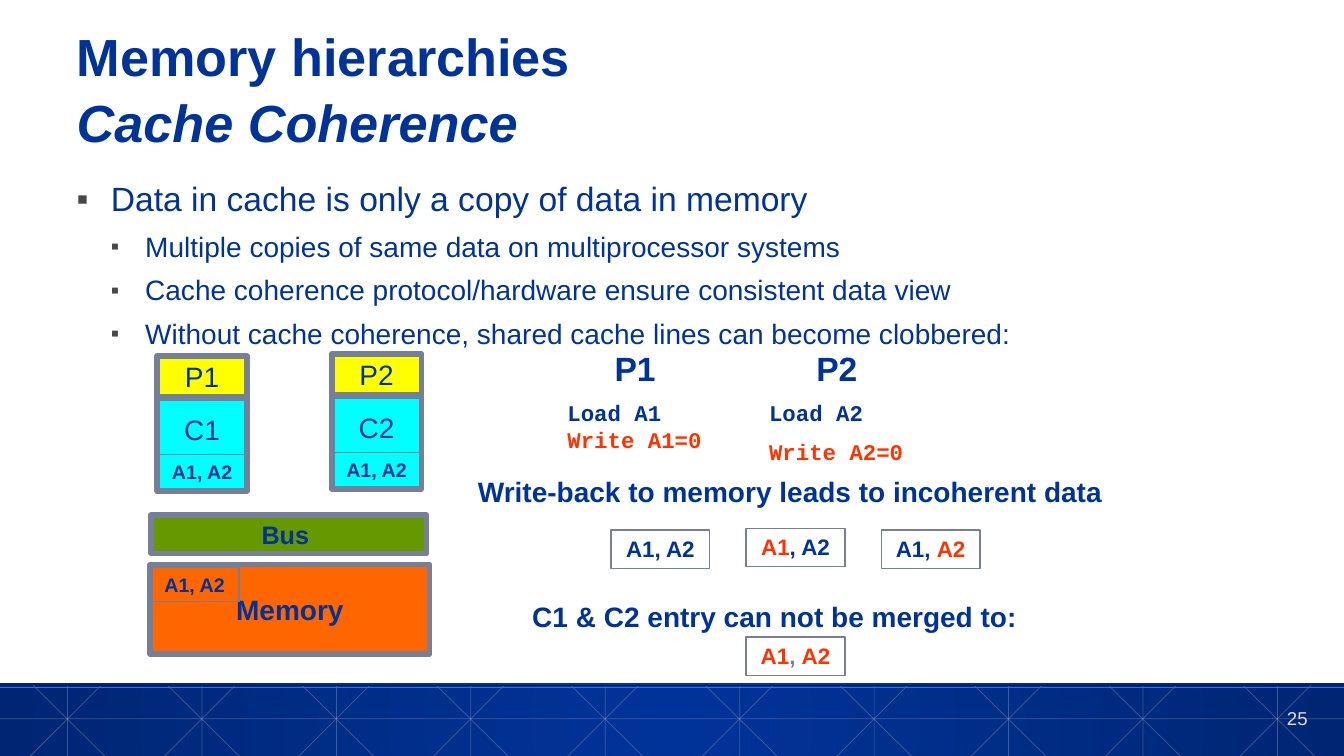
"""Build the cache coherence slide."""
import pptx
import pptx.dml.color
import pptx.enum.shapes
import pptx.enum.text
import pptx.oxml
import pptx.oxml.ns
import pptx.util
from pptx.util import Inches

Color = pptx.dml.color.RGBColor
Pt = pptx.util.Pt
Align = pptx.enum.text.PP_ALIGN
Anchor = pptx.enum.text.MSO_ANCHOR
Kind = pptx.enum.shapes.MSO_SHAPE
Wire = pptx.enum.shapes.MSO_CONNECTOR

NAVY = Color(0x00, 0x33, 0x99)
DEEP = Color(0x00, 0x26, 0x73)
INK = Color(0x00, 0x19, 0x4C)
SKY = Color(0x29, 0x70, 0xFF)
MESH = Color(0xAC, 0xB2, 0xC2)
PALE = Color(0xDD, 0xDE, 0xDD)
SLATE = Color(0x75, 0x7F, 0x99)
RED = Color(0xFF, 0x33, 0x00)
ORANGE = Color(0xFF, 0x66, 0x00)
CYAN = Color(0x00, 0xFF, 0xFF)
YELLOW = Color(0xFF, 0xFF, 0x00)
GREEN = Color(0x66, 0x99, 0x00)

TITLE = [[("Memory hierarchies\n", NAVY), ("Cache Coherence", NAVY, True)]]
POINTS = [
    (0, "Data in cache is only a copy of data in memory"),
    (1, "Multiple copies of same data on multiprocessor systems"),
    (1, "Cache coherence protocol/hardware ensure consistent data view"),
    (1, "Without cache coherence, shared cache lines can become clobbered:"),
]
PAIR = [[("A1, A2", NAVY)]]
CORES = [("1", 1.56, 3.53), ("2", 3.29, 3.51)]
HEADS = [("P1", 5.3), ("P2", 7.3)]
CODE = [
    (5.53, 0.64, [[("Load A1\n", NAVY), ("Write A1=0", RED)]]),
    (7.53, 0.77, [[("Load A2", NAVY)], [("Write A2=0", RED)]]),
]
CLAIMS = [
    (4.64, 4.66, 6.75, 0.58, "Write-back to memory leads to incoherent data"),
    (5.18, 5.9, 5.42, 0.44, "C1 & C2 entry can not be merged to:"),
]
STATES = [
    (6.06, 5.26, PAIR),
    (7.4, 5.24, [[("A1", RED), (", A2", NAVY)]]),
    (8.74, 5.26, [[("A1, ", NAVY), ("A2", RED)]]),
    (7.4, 6.32, [[("A1", RED), (", ", SLATE), ("A2", RED)]]),
]

deck = pptx.Presentation()
deck.slide_width, deck.slide_height = Inches(13.33), Inches(7.5)
slide = deck.slides.add_slide(deck.slide_layouts[6])
shapes = slide.shapes


def style(font, size, color, bold, face="Arial"):
    font.name, font.size, font.bold = face, Pt(size), bold
    font.color.rgb = color


def write(shape, paras, size, bold=True, face="Arial", align=Align.LEFT,
          anchor=Anchor.TOP, inset=None, gap=0, lead=None, wrap=True):
    frame = shape.text_frame
    frame.word_wrap, frame.vertical_anchor = wrap, anchor
    if inset is not None:
        frame.margin_left = frame.margin_right = Inches(inset)
        frame.margin_top = frame.margin_bottom = Inches(inset)
    for n, runs in enumerate(paras):
        para = frame.add_paragraph() if n else frame.paragraphs[0]
        para.alignment = align
        if lead:
            para.line_spacing = lead
        if n:
            para.space_before = Pt(gap)
        for words, color, *slant in runs:
            run = para.add_run()
            run.text = words.rstrip("\n")
            style(run.font, size, color, bold, face)
            if slant:
                run.font.italic = True
            if words.endswith("\n"):
                para.add_line_break()


def label(x, y, w, h, paras, size, **look):
    write(shapes.add_textbox(*map(Inches, (x, y, w, h))), paras, size, **look)


def block(x, y, w, h, fill=None, width=4):
    box = shapes.add_shape(Kind.RECTANGLE, *map(Inches, (x, y, w, h)))
    box.shadow.inherit = False
    if fill is None:
        box.fill.background()
    else:
        box.fill.solid()
        box.fill.fore_color.rgb = fill
    if width:
        box.line.color.rgb, box.line.width = SLATE, Pt(width)
    else:
        box.line.fill.background()
    return box


def part(x, y, w, h, fill, words, size, bold=False):
    box = block(x, y, w, h, fill)
    write(box, [[(words, NAVY)]], size, bold, align=Align.CENTER,
          anchor=Anchor.MIDDLE, wrap=False)
    return box


def cell(x, y, w, h, paras, size):
    write(block(x, y, w, h, width=1), paras, size, align=Align.CENTER)


def element(xml):
    return pptx.oxml.parse_xml(xml.replace(" ", f" {pptx.oxml.ns.nsdecls('a')} ", 1))


def rule(x1, y1, x2, y2, color, width, alpha=None):
    line = shapes.add_connector(Wire.STRAIGHT, *map(Inches, (x1, y1, x2, y2)))
    line.line.color.rgb, line.line.width = color, Pt(width)
    props = line._element.spPr
    if alpha:
        tone = props.find(".//" + pptx.oxml.ns.qn("a:srgbClr"))
        tone.append(element(f'<a:alpha val="{alpha * 1000}"/>'))
    props.append(element("<a:effectLst />"))


def footer():
    band = block(0, 6.78, 13.33, 0.72, width=0)
    band.fill.gradient()
    for stop, color in zip(band.fill.gradient_stops, (NAVY, DEEP)):
        stop.color.rgb = color
    grad = band._element.spPr.find(pptx.oxml.ns.qn("a:gradFill"))
    grad.remove(grad.find(pptx.oxml.ns.qn("a:lin")))
    grad.append(element('<a:path path="circle"><a:fillToRect l="50000" '
                        't="50000" r="50000" b="50000"/></a:path>'))
    for n in range(10):
        mid = 0.67 + n * 4 / 3
        for top, foot in ((0, 0), (-0.34, 0.37), (0.33, -0.37)):
            rule(mid + top, 6.8, mid + foot, 7.5, MESH, 0.5, 35)
    rule(0, 7.13, 13.33, 7.13, MESH, 0.5, 35)
    rule(0.36, 6.8, 12.99, 6.8, INK, 1.25)
    rule(0, 6.82, 13.33, 6.82, SKY, 1)
    label(12.6, 7.01, 0.37, 0.22, [[("25", PALE)]], 13.3, bold=False,
          align=Align.RIGHT, anchor=Anchor.BOTTOM, inset=0)


def bullets():
    body = shapes.add_textbox(*map(Inches, (0.76, 1.73, 11.81, 4.88)))
    write(body, [[(words, NAVY)] for _, words in POINTS], 24, False,
          inset=0, gap=5, lead=1.1)
    for para, (level, _) in zip(body.text_frame.paragraphs, POINTS):
        props = para._p.get_or_add_pPr()
        props.set("marL", str(Inches(0.34 * (level + 1))))
        props.set("indent", str(Inches(-0.34)))
        props.append(element('<a:buClr ><a:srgbClr val="474847"/></a:buClr>'))
        props.append(element(f'<a:buSzPct val="{85 if level else 100}000"/>'))
        props.append(element('<a:buFont typeface="Arial"/>'))
        props.append(element('<a:buChar char="▪"/>'))
        para.level = level
        para.runs[0].font.size = Pt(20 if level else 24)


def machine():
    part(1.49, 5.6, 2.77, 0.89, ORANGE, "Memory", 20, True)
    cell(1.49, 5.63, 0.88, 0.34, PAIR, 14)
    part(1.5, 5.11, 2.73, 0.38, GREEN, "Bus ", 18, True)
    for name, x, y in CORES:
        cache = part(x, y + 0.42, 0.89, 0.92, CYAN, "C" + name, 20)
        cache.text_frame.margin_bottom = Inches(0.36)
        part(x, y, 0.89, 0.41, YELLOW, "P" + name, 20)
        cell(x + 0.02, y + 0.98, 0.85, 0.34, PAIR, 14)


def story():
    for name, x in HEADS:
        label(x, 3.4, 2, 0.5, [[(name, NAVY)]], 24, align=Align.CENTER)
    for x, h, paras in CODE:
        label(x, 3.91, 1.77, h, paras, 16, face="Courier New", gap=9)
    for x, y, w, h, words in CLAIMS:
        label(x, y, w, h, [[(words, NAVY)]], 20)
    for x, y, paras in STATES:
        cell(x, y, 0.98, 0.38, paras, 16)


if __name__ == "__main__":
    footer()
    bullets()
    label(0.76, 0.21, 11.81, 1.31, TITLE, 37.3, inset=0, lead=1.05)
    machine()
    story()
    deck.save("out.pptx")
